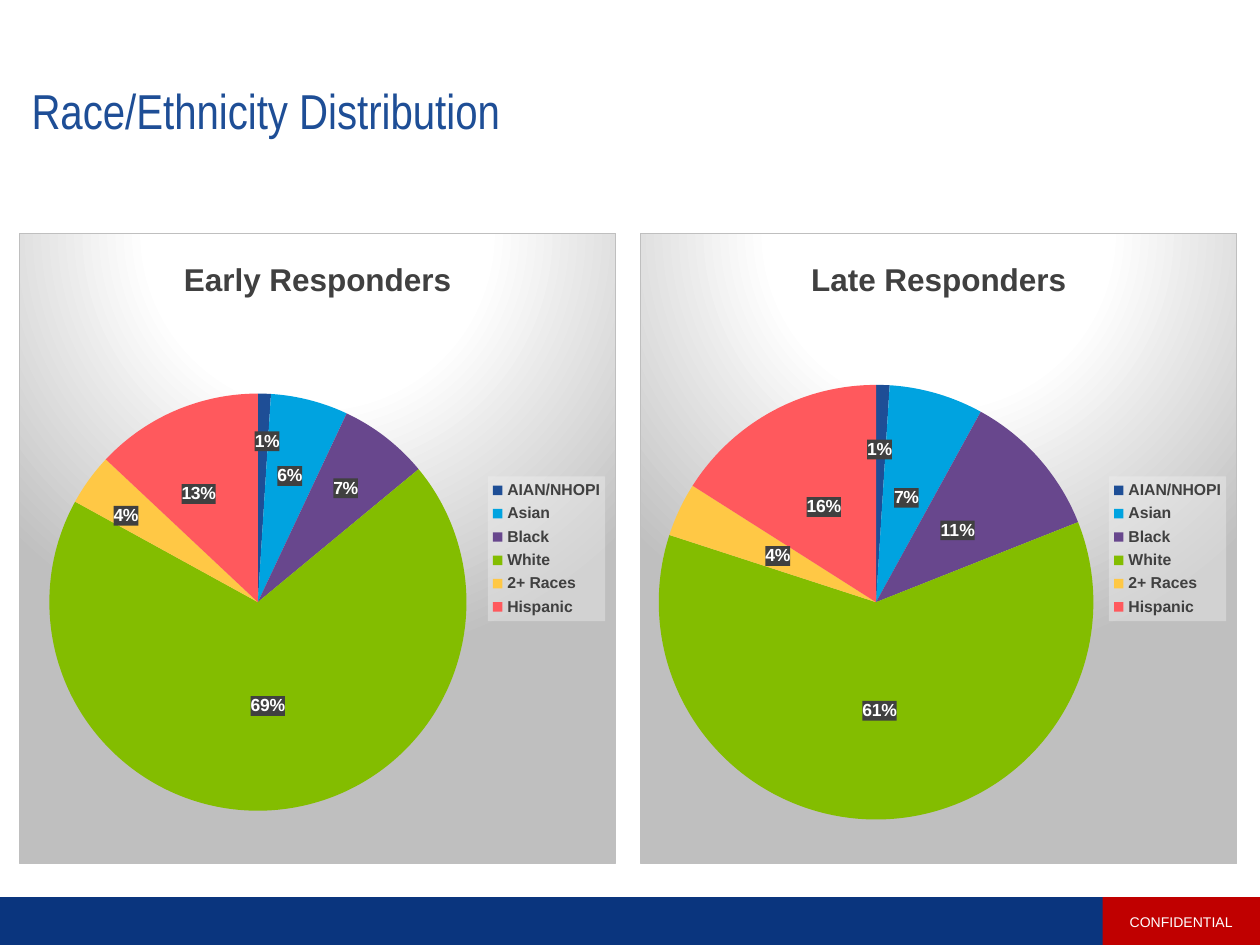
from copy import deepcopy
from lxml.etree import fromstring
from pptx import Presentation
from pptx.chart.data import CategoryChartData
from pptx.dml.color import RGBColor
from pptx.enum.chart import XL_CHART_TYPE, XL_LABEL_POSITION, XL_LEGEND_POSITION
from pptx.enum.shapes import MSO_SHAPE
from pptx.enum.text import MSO_ANCHOR, PP_ALIGN
from pptx.oxml.ns import nsdecls, qn
from pptx.util import Inches, Pt

HUES = dict(navy="0A357E", red="C00000", blue="1E4E96", white="FFFFFF",
            black="000000", dark="404040", grey="BFBFBF", pale="F2F2F2")
TITLE = "Race/Ethnicity Distribution"
RACES = {"AIAN/NHOPI": "1E4E96", "Asian": "00A3E0", "Black": "68478D",
         "White": "83BD00", "2+ Races": "FFC845", "Hispanic": "FF595D"}
# plot: x, y, w, h as shares of the chart; shift: label moves by slice
PIES = [
    dict(name="Early Responders", vals=(1, 6, 7, 69, 4, 13),
         plot=(.05, .25, .7, .67),
         shift={0: (.01, -.09), 1: (.01, -.04), 2: (.04, -.05),
                4: (-.08, -.04), 5: (-.03, -.02)}),
    dict(name="Late Responders", vals=(1, 7, 11, 61, 4, 16),
         plot=(.03, .24, .73, .69), shift={0: (0, -.07)}),
]
FONTS = dict(
    title=dict(name="Arial Narrow", size=28, color="blue", bold=False),
    badge=dict(name="Arial", size=8, color="white", bold=False),
    chart=dict(name="Arial", size=10, color="black", bold=False),
    head=dict(name="Arial", size=18, color="dark", bold=True),
    legend=dict(name="Arial", size=9, color="dark", bold=True),
    label=dict(name="Arial", size=10, color="white", bold=True),
)
LEFT, TOP, WIDE, HIGH, STEP = .15, 1.85, 4.74, 5.01, 4.93
FOOT, BAND, BADGE = 7.12, .39, 1.25


def rgb(name):
    return RGBColor.from_string(HUES[name])


def style(font, kind):
    for key, val in FONTS[kind].items():
        if key == "color":
            font.color.rgb = rgb(val)
        else:
            setattr(font, key, Pt(val) if key == "size" else val)


def solid(hue, alpha):
    return (f'<a:solidFill><a:srgbClr val="{HUES[hue]}">'
            f'<a:alpha val="{alpha * 1000}"/></a:srgbClr></a:solidFill>')


def radial():
    stops = "".join(f'<a:gs pos="{pos * 1000}"><a:srgbClr val="{HUES[hue]}"/></a:gs>'
                    for pos, hue in ((0, "white"), (39, "white"), (100, "grey")))
    return (f'<a:gradFill><a:gsLst>{stops}</a:gsLst><a:path path="circle">'
            '<a:fillToRect l="50000" t="-80000" r="50000" b="180000"/></a:path></a:gradFill>'
            f'<a:ln w="9525"><a:solidFill><a:srgbClr val="{HUES["grey"]}"/></a:solidFill></a:ln>')


def paint(part, fill):
    """Give a chart part its fill, ahead of its text properties."""
    part.find(qn("c:txPr")).addprevious(
        fromstring(f'<c:spPr {nsdecls("c", "a")}>{fill}</c:spPr>'))


def layout(inner="", **spots):
    tags = "".join(f'<c:{key} val="{val}"/>' for key, val in spots.items())
    return fromstring(f'<c:layout {nsdecls("c")}><c:manualLayout>{inner}{tags}'
                      '</c:manualLayout></c:layout>')


def move(labels, idx, x, y):
    """Shift one slice's label, keeping the shared label format."""
    label = fromstring(f'<c:dLbl {nsdecls("c")}><c:idx val="{idx}"/></c:dLbl>')
    label.append(layout(x=x, y=y))
    for part in labels:
        if part.tag not in (qn("c:dLbl"), qn("c:showLeaderLines")):
            label.append(deepcopy(part))
    return label


def add_pie(slide, pie, left):
    data = CategoryChartData()
    data.categories = list(RACES)
    data.add_series(pie["name"], pie["vals"])
    chart = slide.shapes.add_chart(
        XL_CHART_TYPE.PIE, Inches(left), Inches(TOP), Inches(WIDE), Inches(HIGH), data).chart
    style(chart.font, "chart")
    paint(chart._chartSpace, radial())

    chart.has_title = True
    head = chart.chart_title.text_frame
    head.text = pie["name"]
    style(head.paragraphs[0].runs[0].font, "head")

    chart.has_legend = True
    legend = chart.legend
    legend.position = XL_LEGEND_POSITION.RIGHT
    legend.include_in_layout = False
    style(legend.font, "legend")
    paint(legend._element, solid("pale", 39))

    plot = chart.plots[0]
    plot.vary_by_categories = True
    area = chart._chartSpace.chart.plotArea
    for old in area.findall(qn("c:layout")):
        area.remove(old)
    modes = ('<c:layoutTarget val="inner"/><c:xMode val="edge"/><c:yMode val="edge"/>')
    area.insert(0, layout(modes, **dict(zip("xywh", pie["plot"]))))

    series = plot.series[0]
    for idx, hue in enumerate(RACES.values()):
        fill = series.points[idx].format.fill
        fill.solid()
        fill.fore_color.rgb = RGBColor.from_string(hue)

    labels = series.data_labels
    for key, val in dict(show_percentage=True, show_value=False, number_format="0%",
                         number_format_is_linked=False,
                         position=XL_LABEL_POSITION.CENTER).items():
        setattr(labels, key, val)
    style(labels.font, "label")
    base = labels._element
    paint(base, solid("dark", 90))
    moved = [move(base, idx, *spot) for idx, spot in pie["shift"].items()]
    for spot, label in enumerate(moved):
        base.insert(spot, label)


def add_block(slide, left, wide, hue):
    box = slide.shapes.add_shape(
        MSO_SHAPE.RECTANGLE, Inches(left), Inches(FOOT), Inches(wide), Inches(BAND))
    box.shadow.inherit = False
    box.fill.solid()
    box.fill.fore_color.rgb = rgb(hue)
    box.line.fill.background()
    return box


def add_title(slide):
    title = slide.shapes.title
    for key, val in dict(left=LEFT, top=.2, width=9.67, height=1.4).items():
        setattr(title, key, Inches(val))
    frame = title.text_frame
    frame.text = TITLE
    frame.vertical_anchor = MSO_ANCHOR.MIDDLE
    for side, val in dict(left=.1, top=.1, right=.2, bottom=.1).items():
        setattr(frame, f"margin_{side}", Inches(val))
    para = frame.paragraphs[0]
    para.alignment, para.line_spacing = PP_ALIGN.LEFT, .9
    style(para.runs[0].font, "title")


def main():
    deck = Presentation()
    deck.slide_width, deck.slide_height = Inches(10), Inches(7.5)
    slide = deck.slides.add_slide(deck.slide_layouts[5])
    add_block(slide, 0, 10, "navy")
    add_title(slide)

    badge = add_block(slide, 10 - BADGE, BADGE, "red").text_frame
    badge.text = "CONFIDENTIAL"
    badge.vertical_anchor = MSO_ANCHOR.MIDDLE
    para = badge.paragraphs[0]
    para.alignment, para.space_after = PP_ALIGN.CENTER, Pt(6)
    style(para.runs[0].font, "badge")

    for col, pie in enumerate(PIES):
        add_pie(slide, pie, LEFT + col * STEP)
    deck.save("out.pptx")


if __name__ == "__main__":
    main()
